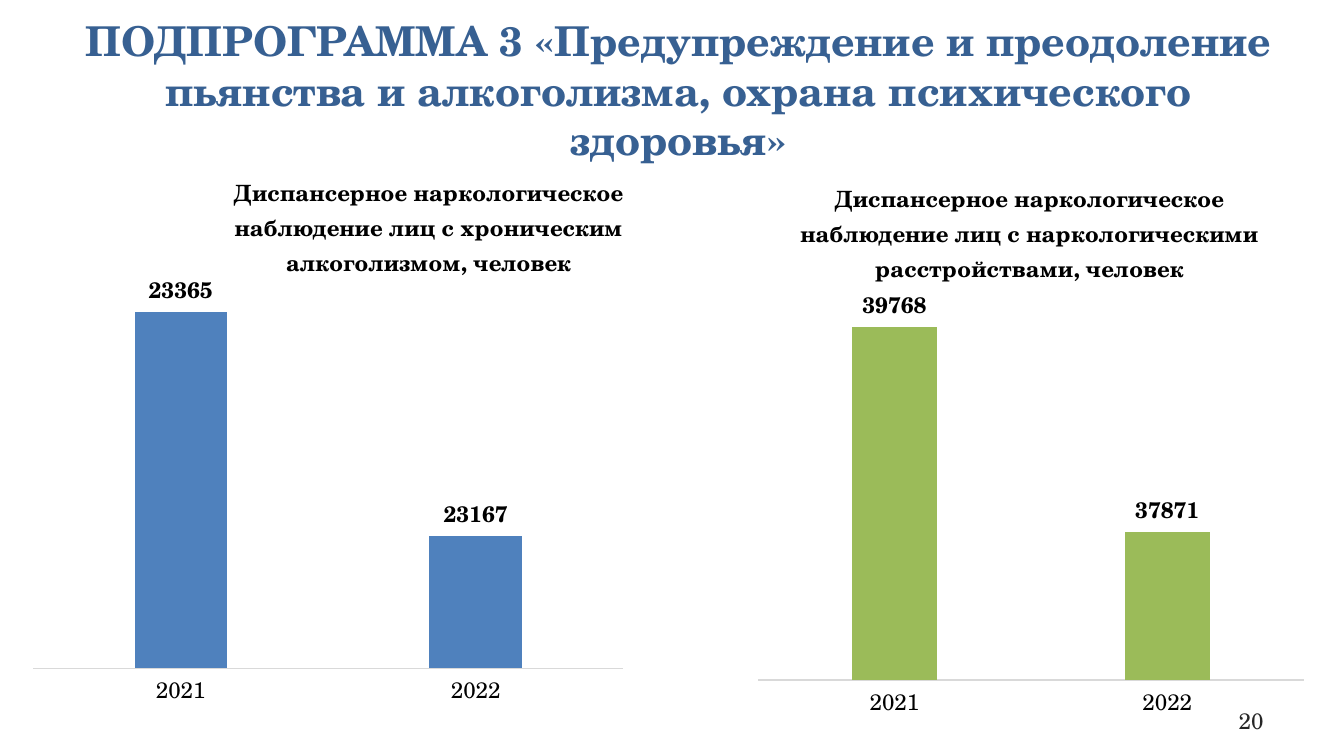
from collections import namedtuple

from lxml.etree import SubElement
from pptx import Presentation
from pptx.chart.data import CategoryChartData
from pptx.dml.color import RGBColor
from pptx.enum.chart import XL_CHART_TYPE as ChartType
from pptx.enum.chart import XL_LABEL_POSITION as LabelPosition
from pptx.enum.chart import XL_TICK_MARK as TickMark
from pptx.enum.text import MSO_ANCHOR as Anchor
from pptx.enum.text import MSO_AUTO_SIZE as AutoSize
from pptx.enum.text import PP_ALIGN as Align
from pptx.oxml import parse_xml
from pptx.oxml.ns import nsdecls, qn
from pptx.util import Cm, Pt

FONT = "TeX Gyre Schola"
HEADING_BLUE = RGBColor(0x37, 0x60, 0x92)
BAR_BLUE = RGBColor(0x4F, 0x81, 0xBD)
BAR_GREEN = RGBColor(0x9B, 0xBB, 0x59)
BLACK = RGBColor(0, 0, 0)
DARK_GRAY = RGBColor(0x26, 0x26, 0x26)
AXIS_GRAY = RGBColor(0xD9, 0xD9, 0xD9)
YEARS = ("2021", "2022")

Box = namedtuple("Box", "left top width height")
Panel = namedtuple("Panel", "caption counts scale color caption_at plot_at")

PANELS = (
    Panel(
        "Диспансерное наркологическое наблюдение лиц с хроническим алкоголизмом, человек",
        (23365, 23167), (23050, 23400), BAR_BLUE,
        {"x": 0.32, "y": 0.02},
        {"x": 0.01, "y": 0.2, "w": 0.93, "h": 0.68},
    ),
    Panel(
        "Диспансерное наркологическое наблюдение лиц с наркологическими расстройствами, человек",
        (39768, 37871), (36500, 40000), BAR_GREEN,
        {"x": 0.16, "y": 0.03},
        {"x": 0.1, "y": 0.25, "w": 0.86, "h": 0.65},
    ),
)


def style_font(font, size, color, bold=False):
    """Apply the slide's typeface with a size, colour and weight."""
    font.name = FONT
    font.size = Pt(size)
    font.bold = bold
    font.color.rgb = color


def set_layout(parent, index, fractions, inner=False):
    """Give a chart part a manual layout in fractions of the chart."""
    for old_layout in parent.findall(qn("c:layout")):
        parent.remove(old_layout)
    layout = parse_xml(f"<c:layout {nsdecls('c')}><c:manualLayout/></c:layout>")
    if inner:
        SubElement(layout[0], qn("c:layoutTarget")).set("val", "inner")
    for axis in ("x", "y"):
        SubElement(layout[0], qn(f"c:{axis}Mode")).set("val", "edge")
    for key, fraction in fractions.items():
        SubElement(layout[0], qn(f"c:{key}")).set("val", str(fraction))
    parent.insert(index, layout)


def place_heading(slide, box):
    """Place the subprogramme heading in the title placeholder."""
    heading = slide.shapes.title
    heading.left, heading.top, heading.width, heading.height = box
    frame = heading.text_frame
    frame.text = (
        "ПОДПРОГРАММА 3 «Предупреждение и преодоление пьянства и алкоголизма, "
        "охрана психического здоровья»"
    )
    frame.word_wrap = True
    frame.auto_size = AutoSize.NONE
    frame.vertical_anchor = Anchor.MIDDLE
    frame.margin_top, frame.margin_bottom = 0, Cm(0.9)
    paragraph = frame.paragraphs[0]
    paragraph.alignment = Align.CENTER
    style_font(paragraph.runs[0].font, 22, HEADING_BLUE, True)


def place_page_number(slide, box):
    """Place the page number at the lower right."""
    frame = slide.shapes.add_textbox(*box).text_frame
    frame.text = "20"
    frame.word_wrap = True
    frame.vertical_anchor = Anchor.MIDDLE
    paragraph = frame.paragraphs[0]
    paragraph.alignment = Align.RIGHT
    style_font(paragraph.runs[0].font, 12, DARK_GRAY)


def place_panel(slide, box, panel):
    """Place one column chart with its caption, labels and year axis."""
    data = CategoryChartData()
    data.categories = YEARS
    data.add_series("Series 1", panel.counts)
    chart = slide.shapes.add_chart(ChartType.COLUMN_CLUSTERED, *box, data).chart
    style_font(chart.font, 10, BLACK)
    chart.has_legend = False

    caption = chart.chart_title
    caption.text_frame.text = panel.caption
    style_font(caption.text_frame.paragraphs[0].runs[0].font, 12, BLACK, True)
    set_layout(caption._element, 1, panel.caption_at)

    year_axis = chart.category_axis
    year_axis.major_tick_mark = year_axis.minor_tick_mark = TickMark.NONE
    year_axis.format.line.color.rgb = AXIS_GRAY
    year_axis.format.line.width = Pt(0.75)
    style_font(year_axis.tick_labels.font, 12, BLACK)

    count_axis = chart.value_axis
    count_axis.minimum_scale, count_axis.maximum_scale = panel.scale
    count_axis.has_major_gridlines = False
    count_axis.visible = False

    plot = chart.plots[0]
    plot.vary_by_categories = False
    plot.gap_width = 219
    plot.overlap = -27
    set_layout(plot._element.getparent(), 0, panel.plot_at, inner=True)

    bars = plot.series[0]
    bars.format.fill.solid()
    bars.format.fill.fore_color.rgb = panel.color
    labels = bars.data_labels
    labels.show_value = True
    labels.position = LabelPosition.OUTSIDE_END
    style_font(labels.font, 12, BLACK, True)


def main():
    """Build and save the slide."""
    deck = Presentation()
    deck.slide_width, deck.slide_height = Cm(25.4), Cm(14.28)
    slide = deck.slides.add_slide(deck.slide_layouts[5])
    place_heading(slide, Box(Cm(1.02), Cm(0.53), Cm(23.62), Cm(3.23)))
    place_page_number(slide, Box(Cm(18.21), Cm(13.23), Cm(5.92), Cm(0.76)))
    for column, panel in enumerate(PANELS):
        left = Cm(0.51 + column * 12.62)
        place_panel(slide, Box(left, Cm(2.95), Cm(11.99), Cm(11)), panel)
    deck.save("out.pptx")


if __name__ == "__main__":
    main()
